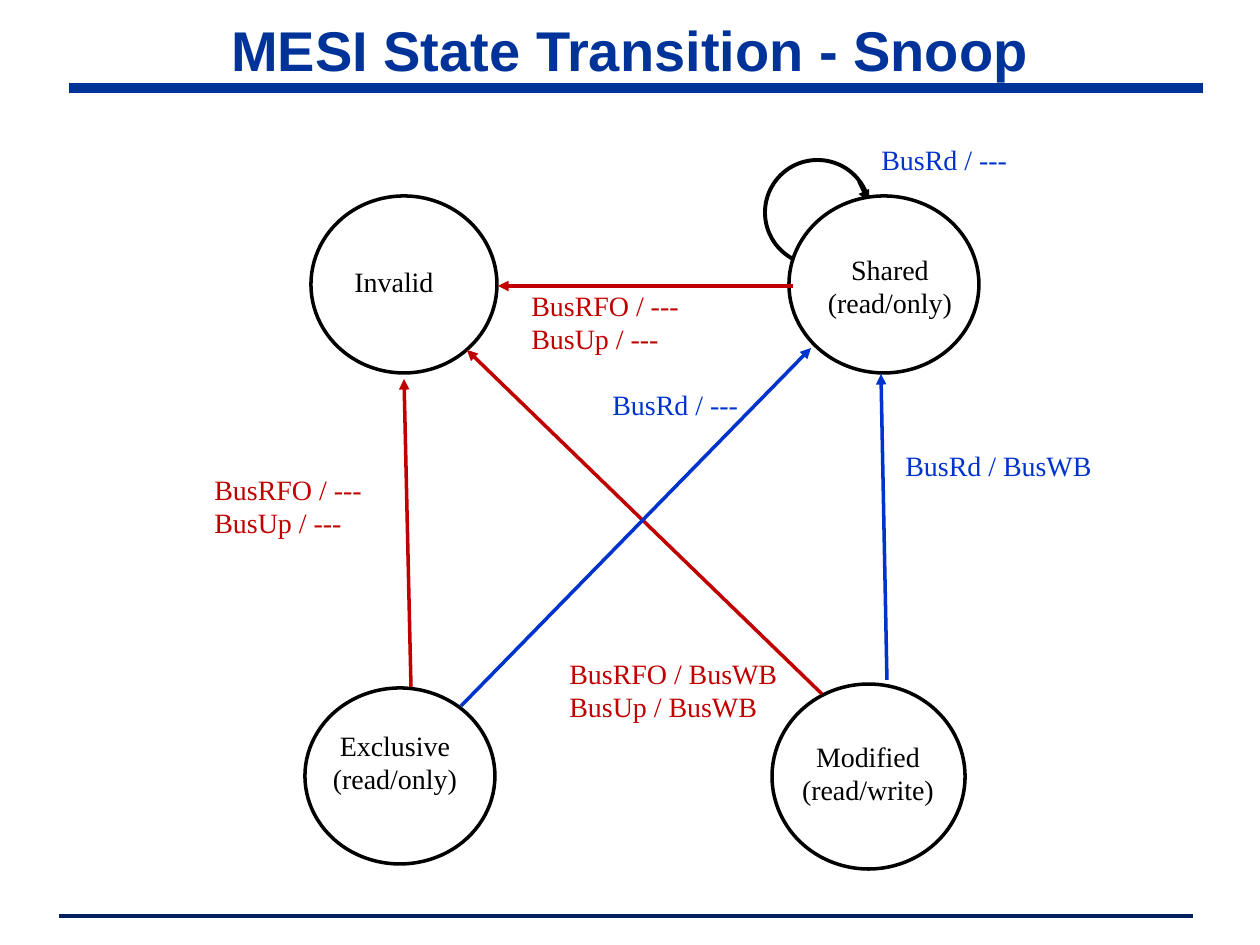
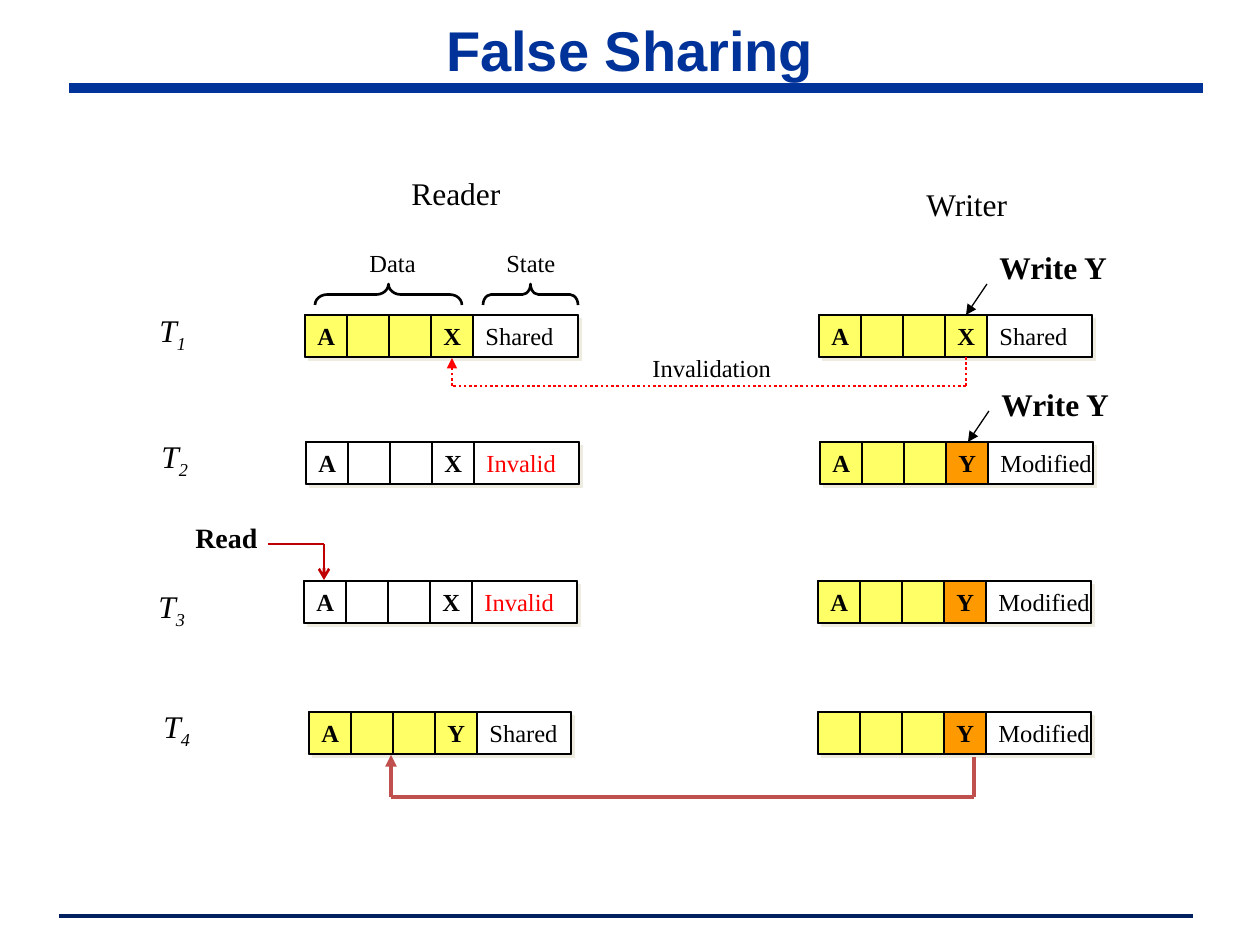
import lxml.etree
import pptx
import pptx.dml.color
import pptx.enum.shapes
import pptx.enum.text
import pptx.oxml.ns
import pptx.util

RGBColor = pptx.dml.color.RGBColor
SHAPE = pptx.enum.shapes.MSO_SHAPE
ALIGN = pptx.enum.text.PP_ALIGN
ANCHOR = pptx.enum.text.MSO_ANCHOR

NAVY = RGBColor(0x00, 0x33, 0x99)
DARK_NAVY = RGBColor(0x00, 0x20, 0x60)
BLUE = RGBColor(0x00, 0x33, 0xCC)
DARK_RED = RGBColor(0xC0, 0x00, 0x00)
RED = RGBColor(0xFF, 0x00, 0x00)
BRICK = RGBColor(0xC0, 0x50, 0x4D)
BLACK = RGBColor(0x00, 0x00, 0x00)
WHITE = RGBColor(0xFF, 0xFF, 0xFF)
YELLOW = RGBColor(0xFF, 0xFF, 0x66)
ORANGE = RGBColor(0xFF, 0x99, 0x00)
SHADOW = RGBColor(0xEE, 0xEC, 0xE1)

TITLE_FONT = "Arial"
BODY_FONT = "Times New Roman"
EMU_PER_PX = 914400 / 126
BODY = (0, 100)  # left and top of the area below the title band
CELL = 42


def px(length):
    return pptx.util.Emu(round(length * EMU_PER_PX))


def add_xml(parent, tag, **attributes):
    return lxml.etree.SubElement(parent, pptx.oxml.ns.qn(tag), attributes)


def fill_text(shape, text, size=14, color=BLACK, font=BODY_FONT, bold=False, italic=False,
              align=ALIGN.LEFT, anchor=ANCHOR.TOP, wrap=False, subscript=""):
    frame = shape.text_frame
    frame.word_wrap = wrap
    frame.vertical_anchor = anchor
    for index, line in enumerate(text.split("\n")):
        paragraph = frame.add_paragraph() if index else frame.paragraphs[0]
        paragraph.alignment = align
        for part in filter(None, (line, subscript)):
            run = paragraph.add_run()
            run.text = part
            run.font.name = font
            run.font.size = pptx.util.Pt(size)
            run.font.bold = bold
            run.font.italic = italic
            run.font.color.rgb = color
            if part == subscript:
                run._r.get_or_add_rPr().set("baseline", "-25000")


def add_text(slide, text, left, top, width=150, height=47, **text_format):
    box = slide.shapes.add_textbox(px(left), px(top), px(width), px(height))
    fill_text(box, text, **text_format)


def add_shape(slide, kind, left, top, width, height, fill=None, weight=0.75):
    shape = slide.shapes.add_shape(kind, px(left), px(top), px(width), px(height))
    shape.shadow.inherit = False
    if fill is None:
        shape.fill.background()
    else:
        shape.fill.solid()
        shape.fill.fore_color.rgb = fill
    shape.line.color.rgb = BLACK
    shape.line.width = pptx.util.Pt(weight)
    return shape


def add_path(slide, points, color, weight, arrowhead=None, dash=None):
    """Straight legs through the points; the last leg may end in an arrowhead."""
    for start, end in zip(points, points[1:]):
        connector = slide.shapes.add_connector(
            pptx.enum.shapes.MSO_CONNECTOR.STRAIGHT, *map(px, (*start, *end)))
        connector.line.color.rgb = color
        connector.line.width = pptx.util.Pt(weight)
        line = connector.line._get_or_add_ln()
        if dash:
            add_xml(line, "a:prstDash", val=dash)
        if arrowhead and end == points[-1]:
            add_xml(line, "a:tailEnd", type=arrowhead)
        add_xml(connector._element.spPr, "a:effectLst")


def shift(origin, points):
    return [(origin[0] + x, origin[1] + y) for x, y in points]


def add_slide(presentation, title):
    """Blank slide with the shared footer rule, band and title."""
    slide = presentation.slides.add_slide(presentation.slide_layouts[6])
    add_path(slide, [(59, 916), (1193, 916)], DARK_NAVY, 2.25)
    add_path(slide, [(69, 88), (1203, 88)], NAVY, 6)
    add_text(slide, title, 63, 20, 1134, 59, size=32, color=NAVY, font=TITLE_FONT,
             bold=True, align=ALIGN.CENTER, anchor=ANCHOR.MIDDLE, wrap=True)
    return slide


def add_state(slide, left, top, width, height, name, label_x, label_y, label_width):
    add_shape(slide, SHAPE.OVAL, left, top, width, height, WHITE, 2)
    add_text(slide, name, left + label_x, top + label_y, label_width, 81,
             size=16, align=ALIGN.CENTER, wrap=True)


def draw_snoop_states(slide, origin):
    left, top = origin
    # Self loop, partly behind the Shared state
    add_shape(slide, SHAPE.OVAL, left + 765, top + 60, 105, 105, WHITE, 2.25)
    add_path(slide, shift(origin, [(859, 81), (869, 102)]), BLACK, 2.25, "triangle")

    # States
    for x, y, *state in (
        (311, 96, 186, 177, "Invalid", 3, 62, 160),
        (789, 96, 190, 177, "Shared\n(read/only)", 12, 50, 178),
        (305, 588, 190, 176, "Exclusive\n(read/only)", -6, 34, 192),
        (772, 584, 193, 185, "Modified\n(read/write)", 0, 49, 192),
    ):
        add_state(slide, left + x, top + y, *state)

    # Transition labels
    for x, y, text, color in (
        (869, 36, "BusRd / ---", BLUE),
        (519, 182, "BusRFO / ---\nBusUp / ---", DARK_RED),
        (600, 281, "BusRd / ---", BLUE),
        (893, 342, "BusRd / BusWB", BLUE),
        (202, 366, "BusRFO / ---\nBusUp / ---", DARK_RED),
        (557, 550, "BusRFO / BusWB\nBusUp / BusWB", DARK_RED),
    ):
        add_text(slide, text, left + x, top + y, 250, 81, size=16, color=color)

    # Transition arrows
    for start, end, color in (
        ((793, 186), (498, 186), DARK_RED),
        ((822, 594), (467, 250), DARK_RED),
        ((461, 606), (811, 248), BLUE),
        ((411, 587), (404, 279), DARK_RED),
        ((887, 580), (881, 274), BLUE),
    ):
        add_path(slide, shift(origin, [start, end]), color, 2, "triangle")


def add_cache_line(slide, left, top, letters, state, fill=YELLOW, last_fill=None,
                   state_color=BLACK, state_width=105):
    """Data cells and a state cell over a shadowed backing."""
    data_width = CELL * len(letters)
    backing = add_shape(slide, SHAPE.RECTANGLE, left, top, data_width + state_width, CELL, fill)
    effects = backing._element.spPr.find(pptx.oxml.ns.qn("a:effectLst"))
    shadow = add_xml(effects, "a:outerShdw", dist="35560", dir="2700000", algn="ctr",
                     rotWithShape="0")
    add_xml(shadow, "a:srgbClr", val=str(SHADOW))
    fills = [fill] * (len(letters) - 1) + [last_fill or fill]
    for index, (letter, cell_fill) in enumerate(zip(letters, fills)):
        cell = add_shape(slide, SHAPE.RECTANGLE, left + index * CELL, top, CELL, CELL, cell_fill)
        if letter:
            fill_text(cell, letter, bold=True, anchor=ANCHOR.MIDDLE)
    cell = add_shape(slide, SHAPE.RECTANGLE, left + data_width, top, state_width, CELL, WHITE)
    fill_text(cell, state, color=state_color, anchor=ANCHOR.MIDDLE)


def add_brace(slide, left, top, width, depth, curve):
    """Brace opening downwards: a right brace turned about its centre."""
    brace = add_shape(slide, SHAPE.RIGHT_BRACE, left + (width - depth) / 2,
                      top + (depth - width) / 2, depth, width, weight=1.5)
    brace.rotation = 270
    brace.adjustments[0] = curve


def add_write(slide, left, top, label_rise):
    add_text(slide, "Write Y", left, top - label_rise, size=18, bold=True)
    add_path(slide, [(left, top), (left - 21, top + 31)], BLACK, 0.75, "triangle")


def draw_false_sharing(slide, origin):
    left, top = origin
    # Column heads and braces
    for x, y, text, size in (
        (399, 68, "Reader", 18), (914, 79, "Writer", 18),
        (357, 142, "Data", 14), (494, 142, "State", 14),
        (640, 247, "Invalidation", 14),
    ):
        add_text(slide, text, left + x, top + y, size=size)
    add_brace(slide, left + 315, top + 184, 147, 21, 0.58)
    add_brace(slide, left + 483, top + 184, 95, 21, 0.38)

    # Cache lines of reader and writer at each time
    old_data = ("A", "", "", "X")
    new_data = ("A", "", "", "Y")
    invalid = dict(state="Invalid", fill=WHITE, state_color=RED)
    shared = dict(state="Shared")
    narrow_shared = dict(state="Shared", state_width=94)
    modified = dict(state="Modified", last_fill=ORANGE)
    rows = (
        (215, (147, -10), (305, old_data, shared), (819, old_data, shared)),
        (342, (149, -11), (306, old_data, invalid), (820, new_data, modified)),
        (481, (146, 0), (304, old_data, invalid), (818, new_data, modified)),
        (612, (151, -11), (309, new_data, narrow_shared), (818, ("", "", "", "Y"), modified)),
    )
    for time, (row_top, (time_x, time_y), *cache_lines) in enumerate(rows, 1):
        add_text(slide, "T", left + time_x, top + row_top + time_y, 57, 50,
                 size=18, italic=True, subscript=str(time))
        for x, letters, line_format in cache_lines:
            add_cache_line(slide, left + x, top + row_top, letters, **line_format)

    # Writes, invalidation, read and reply
    add_write(slide, left + 987, top + 184, 42)
    add_write(slide, left + 989, top + 311, 32)
    add_path(slide, shift(origin, [(966, 257), (966, 286), (452, 286), (452, 258)]),
             RED, 1.5, "triangle", "sysDot")
    add_text(slide, "Read", left + 183, top + 414, size=16, bold=True)
    add_path(slide, shift(origin, [(268, 444), (324, 444), (324, 480)]), DARK_RED, 1.5, "arrow")
    add_path(slide, shift(origin, [(974, 657), (974, 697), (391, 697), (391, 655)]),
             BRICK, 2.25, "triangle")


def main():
    presentation = pptx.Presentation()
    presentation.slide_width = px(1260)
    presentation.slide_height = px(945)
    draw_snoop_states(add_slide(presentation, "MESI State Transition - Snoop"), BODY)
    draw_false_sharing(add_slide(presentation, "False Sharing"), BODY)
    presentation.save("out.pptx")


if __name__ == "__main__":
    main()
